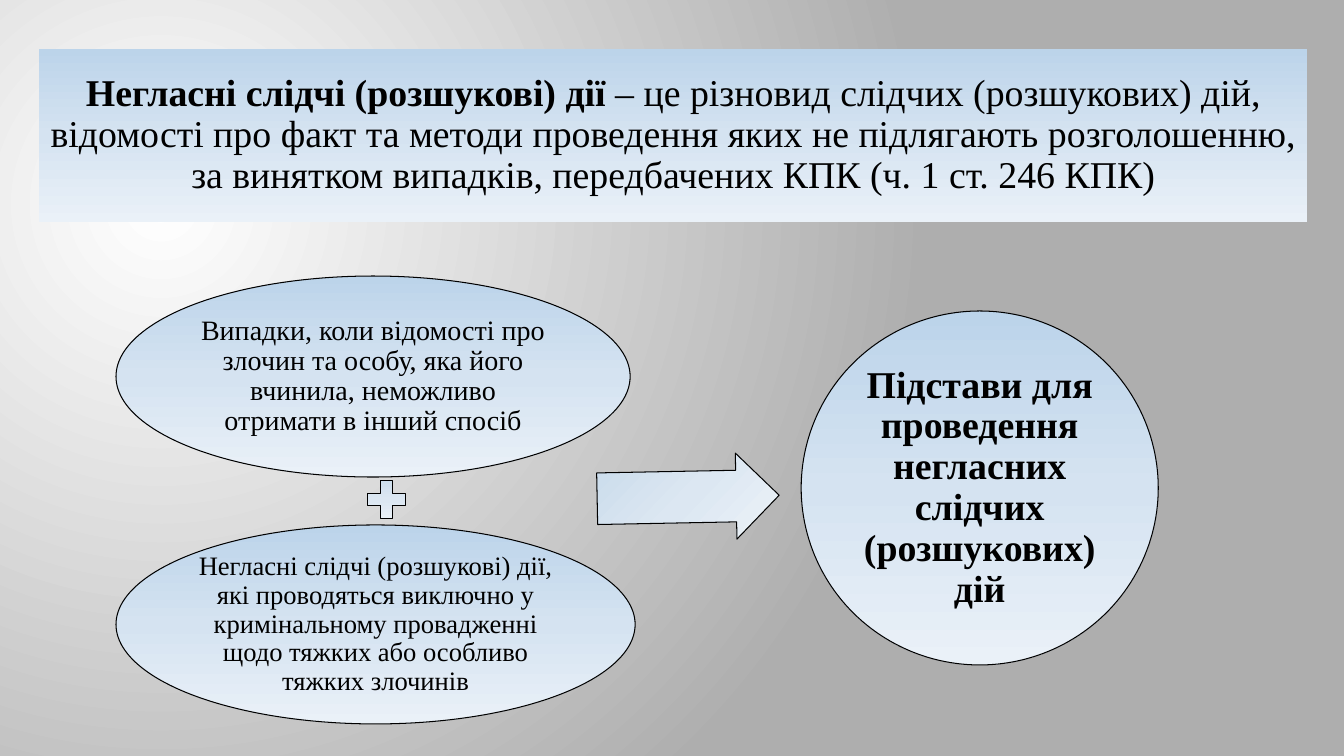
from lxml import etree
from pptx import Presentation, util as u
from pptx.dml.color import RGBColor
from pptx.enum import shapes, text
from pptx.oxml.ns import qn

PX = 914400 / 100.8
BLACK = RGBColor(0x00, 0x00, 0x00)
WHITE = RGBColor(0xFF, 0xFF, 0xFF)
GREY = RGBColor(0xAE, 0xAE, 0xAE)
BLUES = [RGBColor(0xBC, 0xD4, 0xEA), RGBColor(0xD5, 0xE3, 0xF1), RGBColor(0xEA, 0xF1, 0xF8)]
PALE_BLUES = [RGBColor(0xC9, 0xDB, 0xEB), RGBColor(0xDC, 0xE7, 0xF2), RGBColor(0xED, 0xF3, 0xF8)]
FONT = "Times New Roman"

# Content: runs are (text, bold); boxes are left, top, width, height in px
BANNER = {
    "box": (39, 49, 1268, 173), "size": 27, "inset": 11,
    "runs": [("Негласні слідчі (розшукові) дії", True),
             (" – це різновид слідчих (розшукових) дій, відомості про факт та методи проведення "
              "яких не підлягають розголошенню, за винятком випадків, передбачених КПК "
              "(ч. 1 ст. 246 КПК)", False)],
}
ELLIPSES = [
    {"box": (116, 276, 514, 201), "size": 20, "inset": 3,
     "runs": [("Випадки, коли відомості про злочин та особу, яка його вчинила, "
               "неможливо отримати в інший спосіб", False)]},
    {"box": (116, 525, 519, 199), "size": 19, "inset": 3,
     "runs": [("Негласні слідчі (розшукові) дії, які проводяться виключно у кримінальному "
               "провадженні щодо тяжких або особливо тяжких злочинів", False)]},
    {"box": (801, 311, 357, 354), "size": 27, "inset": 4,
     "runs": [("Підстави для проведення негласних слідчих (розшукових) дій", True)]},
]
PLUS_BOX = (361, 474, 51, 51)
ARROW_BOX = (597, 454, 182, 86)


def emu(box):
    return [u.Emu(round(v * PX)) for v in box]


def gradient(fill, parent, colors, angle=270):
    """Fill with evenly spaced colour stops and return the gradient element."""
    fill.gradient()
    fill.gradient_angle = angle
    grad = next(parent.iter(qn("a:gradFill")))
    stops = grad.find(qn("a:gsLst"))
    for old in list(stops):
        stops.remove(old)
    for i, color in enumerate(colors):
        gs = etree.SubElement(stops, qn("a:gs"), pos=str(100000 * i // (len(colors) - 1)))
        etree.SubElement(gs, qn("a:srgbClr"), val=str(color))
    return grad


def write(sp, item):
    tf = sp.text_frame
    inset = u.Emu(round(item["inset"] * PX))
    frame = {"word_wrap": True, "auto_size": text.MSO_AUTO_SIZE.NONE,
             "vertical_anchor": text.MSO_ANCHOR.MIDDLE,
             "margin_left": inset, "margin_right": inset,
             "margin_top": inset, "margin_bottom": inset}
    for name, value in frame.items():
        setattr(tf, name, value)
    p = tf.paragraphs[0]
    p.alignment, p.line_spacing = text.PP_ALIGN.CENTER, 0.9
    for words, bold in item["runs"]:
        r = p.add_run()
        r.text = words
        for name, value in {"name": FONT, "size": u.Pt(item["size"]), "bold": bold}.items():
            setattr(r.font, name, value)
        r.font.color.rgb = BLACK


def add_outlined(s, kind, box, colors, angle=270):
    sp = s.shapes.add_shape(kind, *emu(box))
    sp.shadow.inherit = False
    gradient(sp.fill, sp.element.spPr, colors, angle)
    sp.line.color.rgb = BLACK
    sp.line.width = u.Pt(0.75)
    return sp


prs = Presentation()
prs.slide_width, prs.slide_height = u.Inches(13.33), u.Inches(7.5)
s = prs.slides.add_slide(prs.slide_layouts[5])

# Background: circular glow off to the left
grad = gradient(s.background.fill, s.element, [WHITE, GREY])
grad.remove(grad.find(qn("a:lin")))
glow = etree.SubElement(grad, qn("a:path"), {"path": "circle"})
etree.SubElement(glow, qn("a:fillToRect"), l="50000", t="55000", r="125000", b="100000")

# Definition banner
title = s.shapes.title
title.left, title.top, title.width, title.height = emu(BANNER["box"])
gradient(title.fill, title.element.spPr, BLUES)
write(title, BANNER)

# Two conditions and the result
for item in ELLIPSES:
    write(add_outlined(s, shapes.MSO_SHAPE.OVAL, item["box"], BLUES), item)

# Plus sign and arrow
add_outlined(s, shapes.MSO_SHAPE.MATH_PLUS, PLUS_BOX, PALE_BLUES)
arrow = add_outlined(s, shapes.MSO_SHAPE.RIGHT_ARROW, ARROW_BOX, PALE_BLUES, 315)
arrow.adjustments[0] = 0.6
arrow.rotation = 358.9

prs.save("out.pptx")
